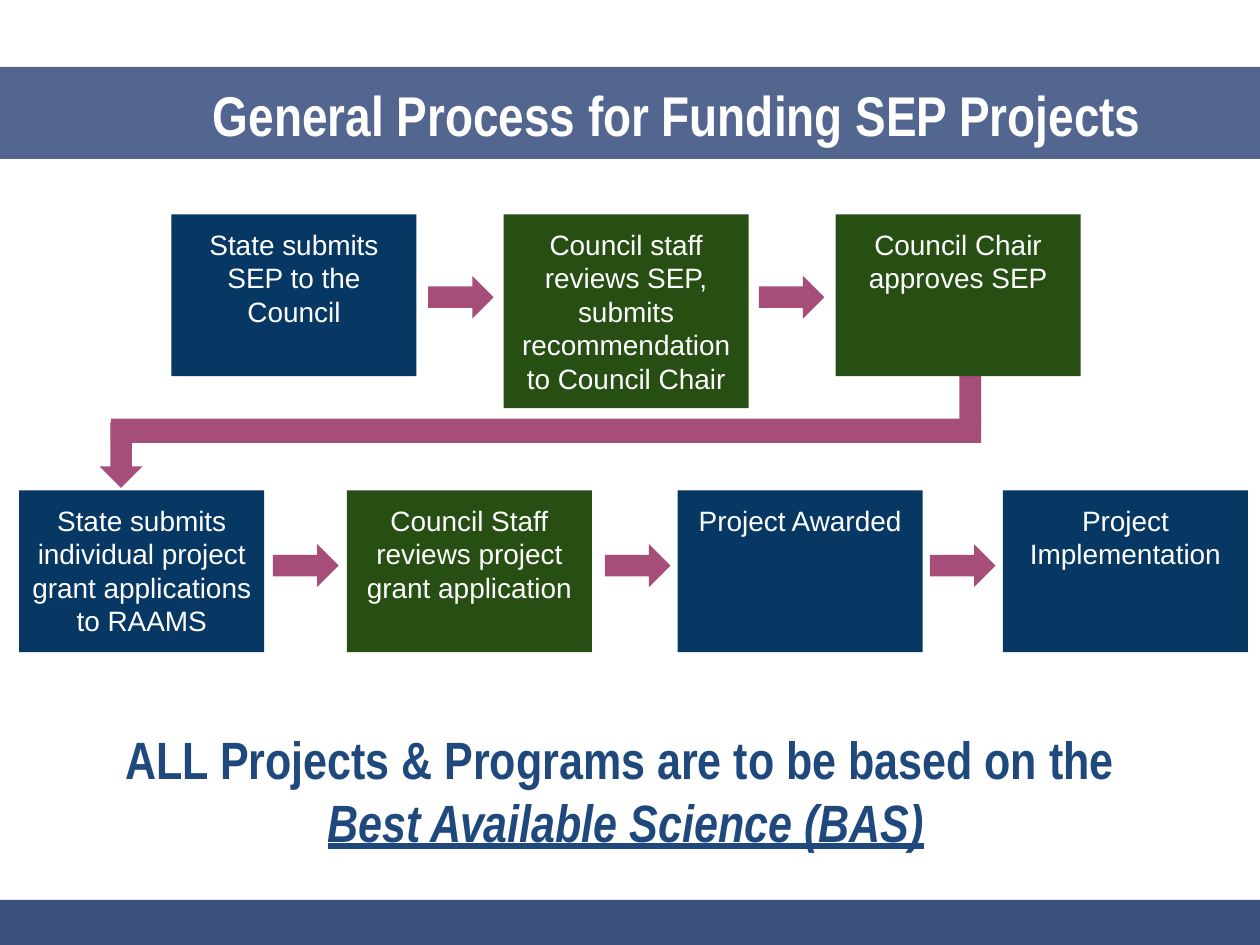
from lxml.etree import SubElement
from pptx import Presentation
from pptx.dml.color import RGBColor
from pptx.enum.shapes import MSO_SHAPE as SHAPE
from pptx.enum.text import MSO_ANCHOR as ANCHOR, PP_ALIGN as ALIGN
from pptx.oxml.ns import qn
from pptx.util import Pt

COLORS = {"band": "39507F", "state": "073763", "council": "274E13",
          "arrow": "A64D79", "white": "FFFFFF", "closing": "1F497D"}
BOX_W, BOX_H = 140, 92.4
ARROW_W, ARROW_H = 37.5, 24.5

prs = Presentation()
prs.slide_width, prs.slide_height = Pt(720), Pt(540)
s = prs.slides.add_slide(prs.slide_layouts[5])


def add_block(kind, x, y, w, h, color):
    sp = s.shapes.add_shape(kind, Pt(x), Pt(y), Pt(w), Pt(h))
    sp.shadow.inherit = False
    sp.fill.solid()
    sp.fill.fore_color.rgb = RGBColor.from_string(COLORS[color])
    sp.line.fill.background()
    return sp


def format_text(sp, anchor, align, font, size, color, bold):
    tf = sp.text_frame
    tf.word_wrap = True
    tf.vertical_anchor = anchor
    tf.margin_left = tf.margin_right = tf.margin_top = tf.margin_bottom = Pt(7.2)
    for p in tf.paragraphs:
        p.alignment = align
        for r in p.runs:
            r.font.name, r.font.size, r.font.bold = font, Pt(size), bold
            r.font.color.rgb = RGBColor.from_string(COLORS[color])


# Footer and title bands
add_block(SHAPE.RECTANGLE, 0, 514.2, 720, 27, "band")
title_band = add_block(SHAPE.RECTANGLE, 0, 38.3, 720, 52.5, "band")
srgb = title_band.fill._xPr.find(".//" + qn("a:srgbClr"))
SubElement(srgb, qn("a:alpha"), val="87000")

# Title, brought in front of its band
title = s.shapes.title
title.left, title.top, title.width, title.height = Pt(114.5), Pt(20.2), Pt(669.6), Pt(90)
title.text_frame.text = "General Process for Funding SEP Projects"
format_text(title, ANCHOR.MIDDLE, ALIGN.LEFT, "Arial Narrow", 32, "white", True)
s.shapes._spTree.append(title._element)

# Elbow from the first row to the second, behind the boxes
add_block(SHAPE.RECTANGLE, 548.2, 170, 12.5, 72, "arrow")
add_block(SHAPE.RECTANGLE, 63.3, 239.2, 497.4, 13.9, "arrow")
down = add_block(SHAPE.RIGHT_ARROW, 50.4, 247.8, ARROW_W, ARROW_H, "arrow")
down.rotation = 90

# Process rows: box top, arrow top, arrow lefts, steps (left, height, owner, text)
rows = [
    (122.6, 157.6, [244.6, 433.6], [
        (98, BOX_H, "state", "State submits SEP to the Council"),
        (287.8, 110.6, "council",
         "Council staff reviews SEP, submits recommendation to Council Chair"),
        (477.5, BOX_H, "council", "Council Chair approves SEP")]),
    (280.3, 311, [156, 345.6, 531.4], [
        (11, BOX_H, "state",
         "State submits individual project grant applications to RAAMS"),
        (198.2, BOX_H, "council", "Council Staff reviews project grant application"),
        (387.2, BOX_H, "state", "Project Awarded"),
        (573.1, BOX_H, "state", "Project Implementation")]),
]
for box_top, arrow_top, arrow_lefts, steps in rows:
    for x, h, owner, text in steps:
        box = add_block(SHAPE.RECTANGLE, x, box_top, BOX_W, h, owner)
        box.text_frame.text = text
        format_text(box, ANCHOR.TOP, ALIGN.CENTER, "Arial", 16, "white", False)
    for x in arrow_lefts:
        add_block(SHAPE.RIGHT_ARROW, x, arrow_top, ARROW_W, ARROW_H, "arrow")

# Closing statement
closing = s.shapes.add_textbox(Pt(-2.2), Pt(382.3), Pt(720), Pt(133.2))
tf = closing.text_frame
tf.text = "ALL Projects & Programs are to be based on the \nBest Available Science (BAS)"
format_text(closing, ANCHOR.MIDDLE, ALIGN.CENTER, "Arial Narrow", 30, "closing", True)
tf.paragraphs[0].line_spacing = 1.15
emphasis = tf.paragraphs[1].runs[0].font
emphasis.italic = emphasis.underline = True

prs.save("out.pptx")
